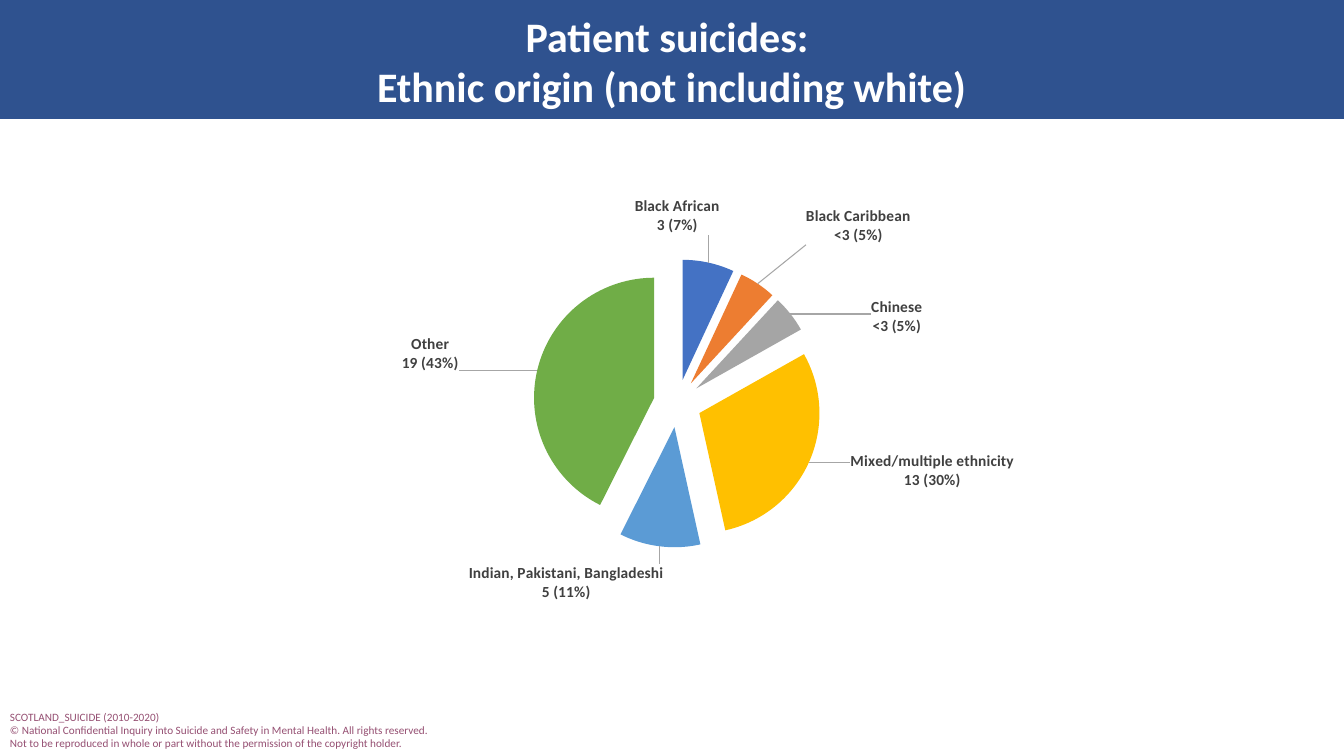
"""Build the slide on patient suicides by ethnic origin."""
from lxml.etree import SubElement
from pptx import Presentation
from pptx.chart.data import CategoryChartData
from pptx.dml.color import RGBColor
from pptx.enum.chart import XL_CHART_TYPE as ChartType, XL_LABEL_POSITION as LabelPosition
from pptx.enum.shapes import MSO_SHAPE as Shape
from pptx.enum.text import MSO_ANCHOR as Anchor, MSO_AUTO_SIZE as AutoSize, PP_ALIGN as Align
from pptx.oxml import parse_xml
from pptx.oxml.ns import nsdecls, qn
from pptx.util import Pt

BAND_BLUE = RGBColor(0x2F, 0x52, 0x8F)
WHITE = RGBColor(0xFF, 0xFF, 0xFF)
BLACK = RGBColor(0, 0, 0)
PLUM = RGBColor(0x95, 0x4F, 0x72)
LABEL_GREY = RGBColor(0x40, 0x40, 0x40)
FONT = "Calibri"
PX = 914400 / 100.8

PAGE = (1344, 756)
BAND = (0, 0, 1344, 119)
TITLE = (0, 15, 1344, 92)
FOOTER = (0, 705, 443, 51)
CHART = (121, 144, 1102, 524)
PLOT = {"x": 0.1, "y": 0.22, "w": 0.81, "h": 0.55}
EXPLOSION = 20

TITLE_LINES = ["Patient suicides: ", "Ethnic origin (not including white)"]
FOOTER_LINES = [
    "SCOTLAND_SUICIDE (2010-2020)",
    "© National Confidential Inquiry into Suicide and Safety in Mental Health. All rights reserved.",
    "Not to be reproduced in whole or part without the permission of the copyright holder.",
]
# Category, share, label count, colour, label shift in px
SLICES = [
    ("Black African", 0.07, "3 (7%)", RGBColor(0x44, 0x72, 0xC4), (-75, -22)),
    ("Black Caribbean", 0.05, "<3 (5%)", RGBColor(0xED, 0x7D, 0x31), (45, -34)),
    ("Chinese", 0.05, "<3 (5%)", RGBColor(0xA5, 0xA5, 0xA5), (76, 25)),
    ("Mixed/multiple ethnicity", 0.3, "13 (30%)", RGBColor(0xFF, 0xC0, 0x00), (36, -13)),
    ("Indian, Pakistani, Bangladeshi", 0.11, "5 (11%)", RGBColor(0x5B, 0x9B, 0xD5), (5, 12)),
    ("Other", 0.43, "19 (43%)", RGBColor(0x70, 0xAD, 0x47), (-73, 4)),
]


def px(*lengths):
    return [round(length * PX) for length in lengths]


def set_font(font, size, color, bold=False):
    font.name, font.size, font.bold = FONT, Pt(size), bold
    font.color.rgb = color


def write_lines(frame, lines, size, color, bold=False, align=Align.LEFT):
    frame.text = "\n".join(lines)
    for para in frame.paragraphs:
        para.alignment = align
        para.line_spacing = 1.0
        para.space_before = Pt(0)
        set_font(para.font, size, color, bold)


def manual_layout(values, target=""):
    layout = parse_xml(f"<c:layout {nsdecls('c')}><c:manualLayout/></c:layout>")
    if target:
        SubElement(layout[0], qn("c:layoutTarget"), val=target)
        for axis in "xy":
            SubElement(layout[0], qn(f"c:{axis}Mode"), val="edge")
    for name, value in values.items():
        SubElement(layout[0], qn(f"c:{name}"), val=str(round(value, 4)))
    return layout


def add_heading(page):
    band = page.shapes.add_shape(Shape.RECTANGLE, *px(*BAND))
    band.shadow.inherit = False
    band.fill.solid()
    band.fill.fore_color.rgb = BAND_BLUE
    band.line.fill.background()
    title = page.shapes.title
    title._element.addprevious(band._element)
    title.left, title.top, title.width, title.height = px(*TITLE)
    title.text_frame.auto_size = AutoSize.NONE
    title.text_frame.vertical_anchor = Anchor.MIDDLE
    write_lines(title.text_frame, TITLE_LINES, 30, WHITE, True, Align.CENTER)


def add_footer(page):
    box = page.shapes.add_textbox(*px(*FOOTER))
    box.text_frame.word_wrap = False
    box.text_frame.auto_size = AutoSize.SHAPE_TO_FIT_TEXT
    write_lines(box.text_frame, FOOTER_LINES, 8, PLUM)


def label_slice(label, lines, shift):
    frame = label.text_frame
    frame.text = "\n".join(lines)
    frame.word_wrap = False
    for para in frame.paragraphs:
        for span in para.runs:
            set_font(span.font, 11, LABEL_GREY, True)
    label.position = LabelPosition.OUTSIDE_END
    offset = {"x": shift[0] / CHART[2], "y": shift[1] / CHART[3]}
    frame._element.getparent().addprevious(manual_layout(offset))


def add_pie(page):
    data = CategoryChartData(number_format="0%")
    data.categories = [part[0] for part in SLICES]
    data.add_series("Series 1", [part[1] for part in SLICES])
    chart = page.shapes.add_chart(ChartType.PIE, *px(*CHART), data).chart
    chart.has_title = chart.has_legend = False
    set_font(chart.font, 10, BLACK)
    pie = chart.plots[0]
    pie.vary_by_categories = True
    area = pie._element.getparent()
    for layout in area.findall(qn("c:layout")):
        area.remove(layout)
    area.insert(0, manual_layout(PLOT, "inner"))

    series = pie.series[0]
    labels = series.data_labels
    labels.show_value = labels.show_category_name = True
    labels.number_format, labels.number_format_is_linked = "0%", False
    labels.position = LabelPosition.OUTSIDE_END
    set_font(labels.font, 11, LABEL_GREY, True)
    labels._element.find(qn("c:txPr")).find(qn("a:bodyPr")).set("wrap", "none")
    for index, (category, _, count, color, shift) in enumerate(SLICES):
        point = series.points[index]
        point.format.fill.solid()
        point.format.fill.fore_color.rgb = color
        label_slice(point.data_label, [category, count], shift)
    explosion = parse_xml(f'<c:explosion {nsdecls("c")} val="{EXPLOSION}"/>')
    series._element.find(qn("c:dPt")).addprevious(explosion)
    for old in labels._element.findall(qn("c:showLeaderLines")):
        labels._element.remove(old)
    SubElement(labels._element, qn("c:showLeaderLines"), val="1")
    labels._element.append(parse_xml(
        f'<c:leaderLines {nsdecls("c", "a")}><c:spPr><a:ln w="9525"><a:solidFill>'
        '<a:srgbClr val="A6A6A6"/></a:solidFill></a:ln></c:spPr></c:leaderLines>'))


def main():
    deck = Presentation()
    deck.slide_width, deck.slide_height = px(*PAGE)
    page = deck.slides.add_slide(deck.slide_layouts[5])
    add_heading(page)
    add_footer(page)
    add_pie(page)
    deck.save("out.pptx")


if __name__ == "__main__":
    main()
